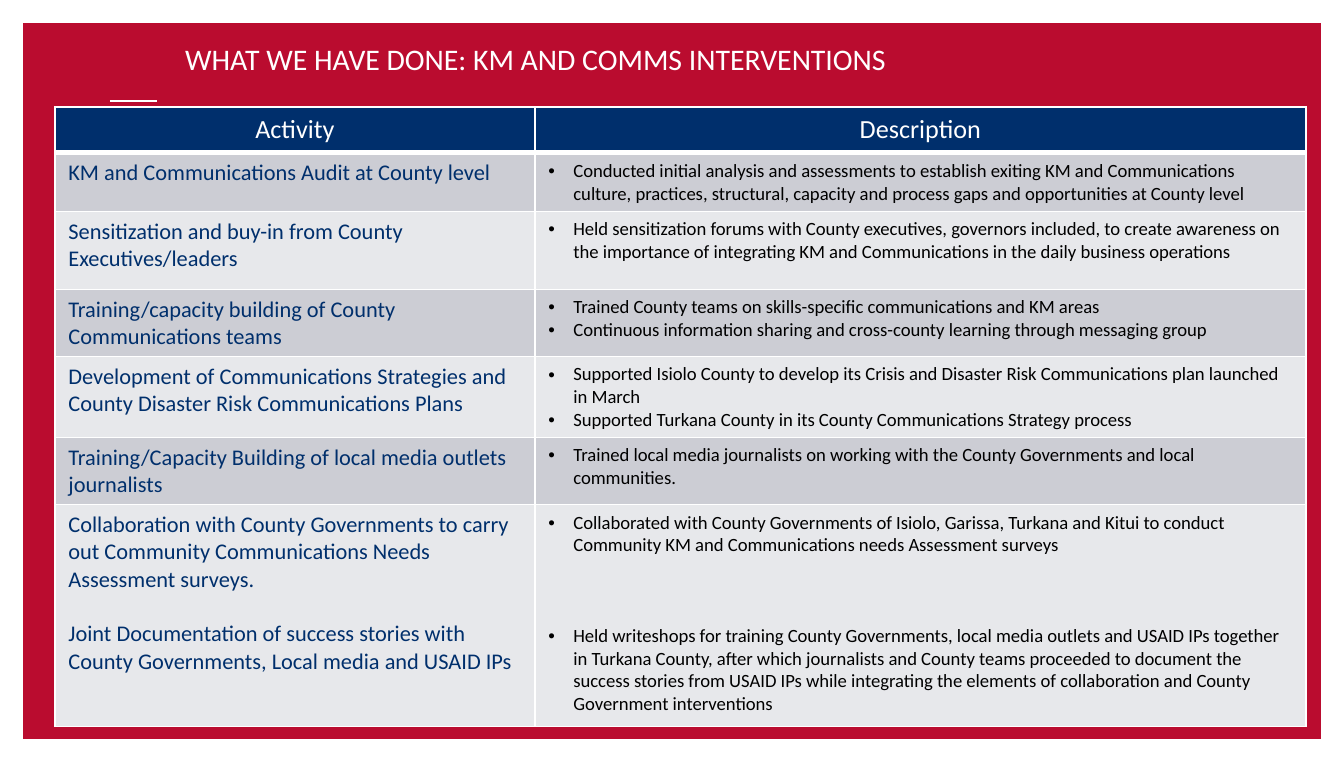
from dataclasses import dataclass

from lxml.etree import SubElement
from pptx import Presentation
from pptx.dml.color import RGBColor
from pptx.enum.shapes import MSO_CONNECTOR, MSO_SHAPE
from pptx.enum.text import MSO_AUTO_SIZE, PP_ALIGN
from pptx.oxml.ns import qn
from pptx.util import Pt

EMU_PER_PX = 914400 / 134.4
SLIDE_WIDTH, SLIDE_HEIGHT = 1344, 762

RED = RGBColor(0xBA, 0x0C, 0x2F)
NAVY = RGBColor(0x00, 0x2F, 0x6C)
WHITE = RGBColor(0xFF, 0xFF, 0xFF)
BLACK = RGBColor(0x00, 0x00, 0x00)
BANDS = (RGBColor(0xCC, 0xCD, 0xD4), RGBColor(0xE7, 0xE8, 0xEB))


def font_format(size: int, color: RGBColor) -> dict:
    return {"name": "Calibri", "size": Pt(size), "bold": False, "color": color}


TITLE = font_format(16, WHITE)
HEADER = font_format(14, WHITE)
ACTIVITY = font_format(12, NAVY)
DESCRIPTION = font_format(10, BLACK)


@dataclass
class Intervention:
    height: int
    activities: list[str]
    descriptions: list[str]
    activity_gap: float = 0
    description_gap: float = 0


INTERVENTIONS = [
    Intervention(56, ["KM and Communications Audit at County level"], [
        "Conducted initial analysis and assessments to establish exiting KM and "
        "Communications culture, practices, structural, capacity and process gaps "
        "and opportunities at County level"]),
    Intervention(78, ["Sensitization and buy-in from County Executives/leaders"], [
        "Held sensitization forums with County executives, governors included, to "
        "create awareness on the importance of integrating KM and Communications "
        "in the daily business operations"]),
    Intervention(65, ["Training/capacity building of County Communications teams"], [
        "Trained County teams on skills-specific communications and KM areas",
        "Continuous information sharing and cross-county learning through "
        "messaging group"]),
    Intervention(78, ["Development of Communications Strategies and County Disaster "
                      "Risk Communications Plans"], [
        "Supported Isiolo County to develop its Crisis and Disaster Risk "
        "Communications plan launched in March",
        "Supported Turkana County in its County Communications Strategy process"]),
    Intervention(65, ["Training/Capacity Building of local media outlets journalists"], [
        "Trained local media journalists on working with the County Governments "
        "and local communities."]),
    Intervention(222, [
        "Collaboration with County Governments to carry out Community "
        "Communications Needs Assessment surveys.",
        "Joint Documentation of success stories with County Governments, Local "
        "media and USAID IPs"], [
        "Collaborated with County Governments of Isiolo, Garissa, Turkana and "
        "Kitui to conduct Community KM and Communications needs Assessment surveys",
        "Held writeshops for training County Governments, local media outlets and "
        "USAID IPs together in Turkana County, after which journalists and County "
        "teams proceeded to document the success stories from USAID IPs while "
        "integrating the elements of collaboration and County Government "
        "interventions"], activity_gap=14.6, description_gap=36.6),
]


def px(length: int) -> int:
    return round(length * EMU_PER_PX)


def box(*lengths: int) -> list[int]:
    return [px(length) for length in lengths]


def add_bullet(paragraph) -> None:
    properties = paragraph._p.get_or_add_pPr()
    properties.set("marL", str(px(25)))
    properties.set("indent", str(-px(25)))
    SubElement(properties, qn("a:buFont")).set("typeface", "Arial")
    SubElement(properties, qn("a:buChar")).set("char", "•")


def write_text(text_frame, texts: list[str], style: dict, gap: float = 0,
               bullets: bool = False, align=PP_ALIGN.LEFT) -> None:
    for index, text in enumerate(texts):
        paragraph = text_frame.add_paragraph() if index else text_frame.paragraphs[0]
        if bullets:
            add_bullet(paragraph)
        paragraph.alignment = align
        if index and gap:
            paragraph.space_before = Pt(gap)
        run = paragraph.add_run()
        run.text = text
        for name, value in style.items():
            if name == "color":
                run.font.color.rgb = value
            else:
                setattr(run.font, name, value)


def format_cell(cell, fill: RGBColor, bottom_width: int = 1) -> None:
    properties = cell._tc.get_or_add_tcPr()
    for side, width in (("L", 1), ("R", 1), ("T", 1), ("B", bottom_width)):
        line = SubElement(properties, qn(f"a:ln{side}"), w=str(Pt(width)))
        solid = SubElement(line, qn("a:solidFill"))
        SubElement(solid, qn("a:srgbClr")).set("val", str(WHITE))
    cell.fill.solid()
    cell.fill.fore_color.rgb = fill


def add_frame(slide) -> None:
    frame = slide.shapes.add_shape(MSO_SHAPE.FRAME, *box(0, 0, SLIDE_WIDTH, SLIDE_HEIGHT))
    frame.adjustments[0] = 0.03
    frame.shadow.inherit = False
    frame.fill.solid()
    frame.fill.fore_color.rgb = WHITE
    frame.line.fill.background()


def add_accent_line(slide) -> None:
    line = slide.shapes.add_connector(MSO_CONNECTOR.STRAIGHT, *box(110, 101, 157, 101))
    line.line.color.rgb = WHITE
    line.line.width = Pt(1.5)
    SubElement(line._element.spPr, qn("a:effectLst"))


def add_title(slide) -> None:
    text_frame = slide.shapes.add_textbox(*box(172, 34, 1157, 50)).text_frame
    text_frame.word_wrap = True
    text_frame.auto_size = MSO_AUTO_SIZE.SHAPE_TO_FIT_TEXT
    write_text(text_frame, ["WHAT WE HAVE DONE: KM AND COMMS INTERVENTIONS"], TITLE)


def add_interventions_table(slide) -> None:
    heights = [46] + [item.height for item in INTERVENTIONS]
    widths = (480, 771)
    table = slide.shapes.add_table(
        len(heights), len(widths), *box(55, 107, sum(widths), sum(heights))).table
    for column, width in zip(table.columns, widths):
        column.width = px(width)
    for row, height in zip(table.rows, heights):
        row.height = px(height)

    # Header row
    for column, heading in enumerate(("Activity", "Description")):
        cell = table.cell(0, column)
        format_cell(cell, NAVY, bottom_width=3)
        write_text(cell.text_frame, [heading], HEADER, align=PP_ALIGN.CENTER)

    # Banded body rows
    for index, item in enumerate(INTERVENTIONS):
        activity, description = table.rows[index + 1].cells
        for cell in (activity, description):
            format_cell(cell, BANDS[index % 2])
        write_text(activity.text_frame, item.activities, ACTIVITY, item.activity_gap)
        write_text(description.text_frame, item.descriptions, DESCRIPTION,
                   item.description_gap, bullets=True)


def main() -> None:
    presentation = Presentation()
    presentation.slide_width, presentation.slide_height = box(SLIDE_WIDTH, SLIDE_HEIGHT)
    slide = presentation.slides.add_slide(presentation.slide_layouts[6])
    slide.background.fill.solid()
    slide.background.fill.fore_color.rgb = RED
    add_frame(slide)
    add_accent_line(slide)
    add_title(slide)
    add_interventions_table(slide)
    presentation.save("out.pptx")


if __name__ == "__main__":
    main()
